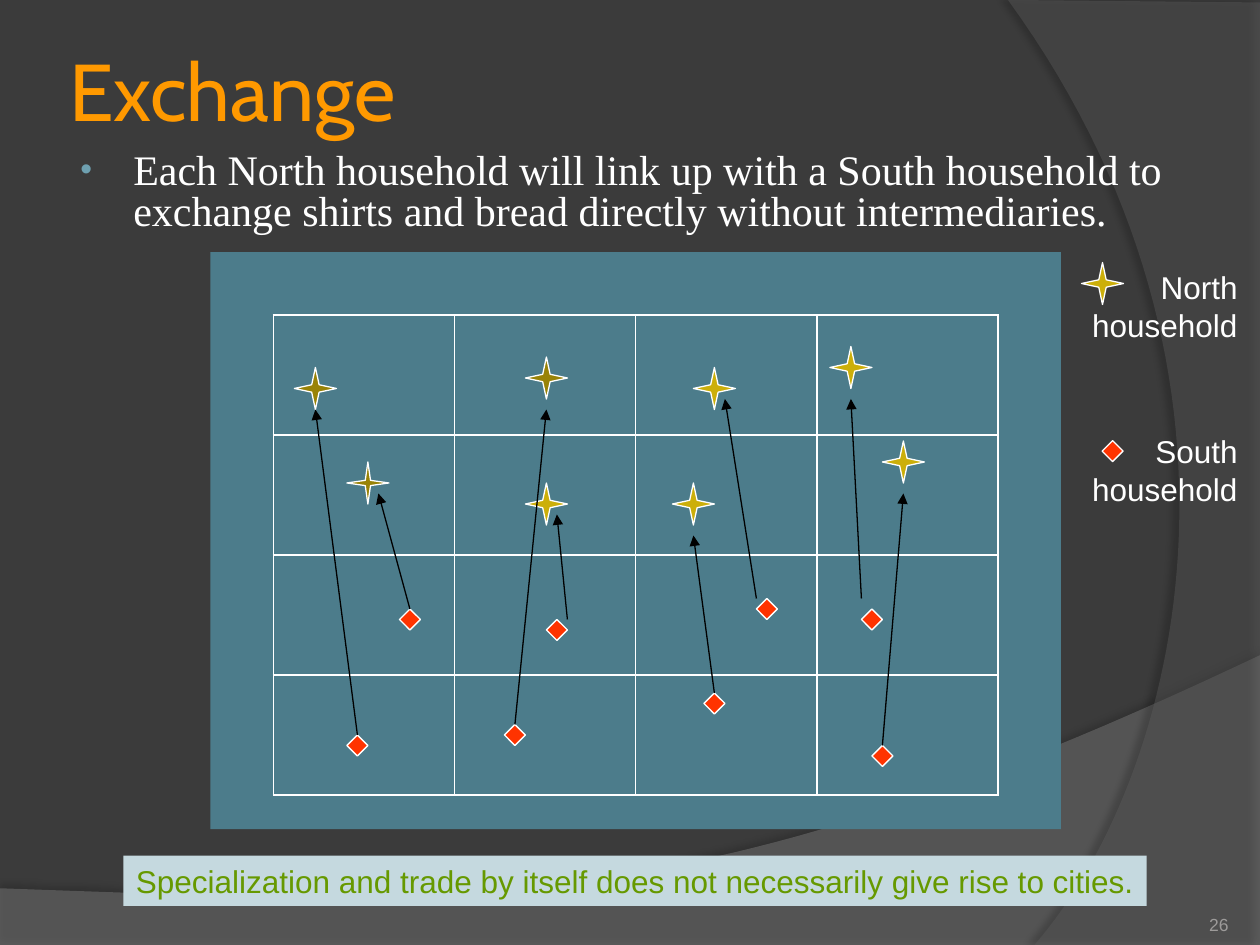
from lxml import etree
from pptx import Presentation
from pptx.dml.color import RGBColor
from pptx.enum.shapes import MSO_CONNECTOR, MSO_SHAPE
from pptx.enum.text import MSO_ANCHOR, PP_ALIGN
from pptx.oxml.ns import qn
from pptx.util import Inches, Pt

WHITE, DARK_GOLD, GOLD, RED = "FFFFFF", "998307", "CCAF0A", "FF3300"
UNIT = 1 / 12  # the map markers sit on a grid of twelfths of an inch
STAR_SIZE, DIAMOND_SIZE = 4 * UNIT, 2 * UNIT

# Centres in grid units from the corner of the map:
# north household, colour, star waist, south household, arrow start, arrow end
TRADES = [
    ((10, 13), DARK_GOLD, 0.125, (14, 47), (14, 46), (10, 15)),
    ((15, 22), DARK_GOLD, 0.089, (19, 35), (19, 34), (16, 23)),
    ((32, 12), DARK_GOLD, 0.125, (29, 46), (29, 45), (32, 15)),
    ((32, 24), GOLD, 0.125, (33, 36), (34, 35), (33, 25)),
    ((48, 13), GOLD, 0.125, (53, 34), (52, 33), (49, 14)),
    ((46, 24), GOLD, 0.125, (48, 43), (48, 42), (46, 27)),
    ((61, 11), GOLD, 0.125, (63, 35), (62, 33), (61, 14)),
    ((66, 20), GOLD, 0.125, (64, 48), (64, 47), (66, 23)),
]


def rgb(value):
    return RGBColor.from_string(value)


def add_element(parent, tag, **attributes):
    return etree.SubElement(parent, qn(tag), attributes)


def add_color(parent, color, opacity=None):
    element = add_element(parent, "a:srgbClr", val=color)
    if opacity is not None:
        add_element(element, "a:alpha", val=str(opacity * 1000))


def add_shape(slide, kind, box, fill, line=None):
    shape = slide.shapes.add_shape(kind, *map(Inches, box))
    shape.shadow.inherit = False
    shape.fill.solid()
    shape.fill.fore_color.rgb = rgb(fill)
    if line:
        shape.line.color.rgb = rgb(line)
        shape.line.width = Pt(0.75)
    else:
        shape.line.fill.background()
    return shape


def write(shape, text, font, size, color, align=PP_ALIGN.LEFT,
          anchor=MSO_ANCHOR.TOP, wrap=True, margin=None):
    frame = shape.text_frame
    frame.word_wrap = wrap
    frame.vertical_anchor = anchor
    if margin is not None:
        frame.margin_left = frame.margin_right = Inches(margin)
        frame.margin_top = frame.margin_bottom = Inches(margin)
    paragraph = frame.paragraphs[0]
    paragraph.alignment = align
    run = paragraph.add_run()
    run.text = text
    run.font.name = font
    run.font.size = Pt(size)
    run.font.color.rgb = rgb(color)
    return paragraph


def add_text(slide, box, *args, **options):
    return write(slide.shapes.add_textbox(*map(Inches, box)), *args, **options)


def curve(start, control_1, control_2, end, steps=60):
    """Points along a cubic Bezier curve, without its start."""
    points = []
    for step in range(1, steps + 1):
        t = step / steps
        weights = ((1 - t) ** 3, 3 * t * (1 - t) ** 2, 3 * t * t * (1 - t), t ** 3)
        corners = (start, control_1, control_2, end)
        points.append(tuple(sum(w * corner[axis] for w, corner in zip(weights, corners))
                            for axis in (0, 1)))
    return points


def add_swoosh(slide, points, color, opacity, shadow_opacity, distance, direction):
    builder = slide.shapes.build_freeform(
        Inches(points[0][0]), Inches(points[0][1]), scale=1.0)
    builder.add_line_segments([(Inches(x), Inches(y)) for x, y in points[1:]])
    shape = builder.convert_to_shape()
    shape.shadow.inherit = False
    shape.fill.solid()
    shape.fill.fore_color.rgb = rgb(color)
    shape.line.fill.background()
    properties = shape.element.spPr
    fill_color = properties.find(qn("a:solidFill"))[0]
    add_element(fill_color, "a:alpha", val=str(opacity * 1000))
    shadow = add_element(properties.find(qn("a:effectLst")), "a:outerShdw",
                         blurRad=str(Pt(4)), dist=str(Pt(distance)),
                         dir=str(direction * 60000), rotWithShape="0")
    add_color(shadow, "000000", shadow_opacity)


def add_background(slide):
    slide.background.fill.solid()
    slide.background.fill.fore_color.rgb = rgb("3B3B3B")
    bottom = [(0, 7.05), (0, 7.51), (10, 7.51), (10, 5.2)]
    bottom += curve((10, 5.2), (5.59, 7.29), (3.91, 7.19), (0, 7.05))
    add_swoosh(slide, bottom, "7F7F7F", 45, 35, 3.5, 270)
    side = [(10, 0.02), (10, 7.5), (8.21, 7.5)]
    side += curve((8.21, 7.5), (9.35, 6.19), (10.18, 3), (8, 0))
    add_swoosh(slide, side, "5E5E5E", 40, 45, 4, 180)


def add_bullet_text(slide, box, text):
    paragraph = add_text(slide, box, text, "Times New Roman", 24, WHITE)
    paragraph.line_spacing = 0.8
    paragraph.space_before = Pt(4.8)
    properties = paragraph.runs[0].font._element.getparent().getparent().get_or_add_pPr()
    properties.set("marL", str(Inches(0.46)))
    properties.set("indent", str(Inches(-0.42)))
    add_color(add_element(properties, "a:buClr"), "6EA0B0")
    add_element(properties, "a:buSzPct", val="80000")
    add_element(properties, "a:buFont", typeface="Arial")
    add_element(properties, "a:buChar", char="•")


def add_grid(slide, box, count=4):
    frame = slide.shapes.add_table(count, count, *map(Inches, box))
    table = frame.table
    table.first_row = table.horz_banding = False
    for cell in table.iter_cells():
        cell.fill.background()
        properties = cell._tc.get_or_add_tcPr()
        for index, side in enumerate(("a:lnL", "a:lnR", "a:lnT", "a:lnB")):
            border = add_element(properties, side, w=str(Pt(1)))
            add_color(add_element(border, "a:solidFill"), WHITE)
            properties.insert(index, border)


def add_marker(slide, kind, center, size, color):
    x, y = center
    return add_shape(slide, kind, (x - size / 2, y - size / 2, size, size), color, WHITE)


def add_star(slide, center, color, waist=0.125):
    star = add_marker(slide, MSO_SHAPE.STAR_4_POINT, center, STAR_SIZE, color)
    star.adjustments[0] = waist


def add_diamond(slide, center):
    add_marker(slide, MSO_SHAPE.DIAMOND, center, DIAMOND_SIZE, RED)


def add_arrow(slide, start, end):
    arrow = slide.shapes.add_connector(
        MSO_CONNECTOR.STRAIGHT, *map(Inches, (*start, *end)))
    arrow.line.color.rgb = rgb("000000")
    arrow.line.width = Pt(0.75)
    add_element(arrow.line._get_or_add_ln(), "a:tailEnd", type="triangle")
    add_element(arrow._element.spPr, "a:effectLst")


def add_map(slide, box):
    left, top, width, height = box

    def place(point):
        return left + point[0] * UNIT, top + point[1] * UNIT

    add_shape(slide, MSO_SHAPE.RECTANGLE, box, "4C7C8B")
    add_grid(slide, (left + 0.5, top + 0.5, 5.75, 3.81))
    for north, color, waist, south, _, _ in TRADES:
        add_star(slide, place(north), color, waist)
        add_diamond(slide, place(south))
    for *_, start, end in TRADES:
        add_arrow(slide, place(start), place(end))


def add_legend(slide, box):
    left, top, width, height = box
    add_star(slide, (left + 0.25, top + 0.17), GOLD)
    add_diamond(slide, (left + 0.33, top + 1.5))
    for label, offset in (("North household", 0), ("South household", 1.3)):
        add_text(slide, (left, top + offset, width, height), label,
                 "Arial", 18, WHITE, PP_ALIGN.RIGHT)


def main():
    presentation = Presentation()
    presentation.slide_width, presentation.slide_height = Inches(10), Inches(7.5)
    slide = presentation.slides.add_slide(presentation.slide_layouts[6])
    add_background(slide)
    add_text(slide, (0.5, 0.08, 9, 1.25), "Exchange", "Cabin", 46, "FF9900",
             anchor=MSO_ANCHOR.MIDDLE, margin=0.05)
    add_bullet_text(slide, (0.5, 1.17, 9, 0.83),
                    "Each North household will link up with a South household to "
                    "exchange shirts and bread directly without intermediaries.")
    add_map(slide, (1.67, 2, 6.75, 4.58))
    add_legend(slide, (8.5, 2.08, 1.42, 0.7))
    banner = add_shape(slide, MSO_SHAPE.RECTANGLE, (0.98, 6.79, 8.12, 0.4), "C5D9DF")
    write(banner, "Specialization and trade by itself does not necessarily give rise "
          "to cities.", "Arial", 18, "669900", wrap=False)
    add_text(slide, (8.92, 7.02, 0.83, 0.4), "26", "Arial", 10, "9D9B9A",
             PP_ALIGN.RIGHT, MSO_ANCHOR.BOTTOM, margin=0)
    presentation.save("out.pptx")


if __name__ == "__main__":
    main()
